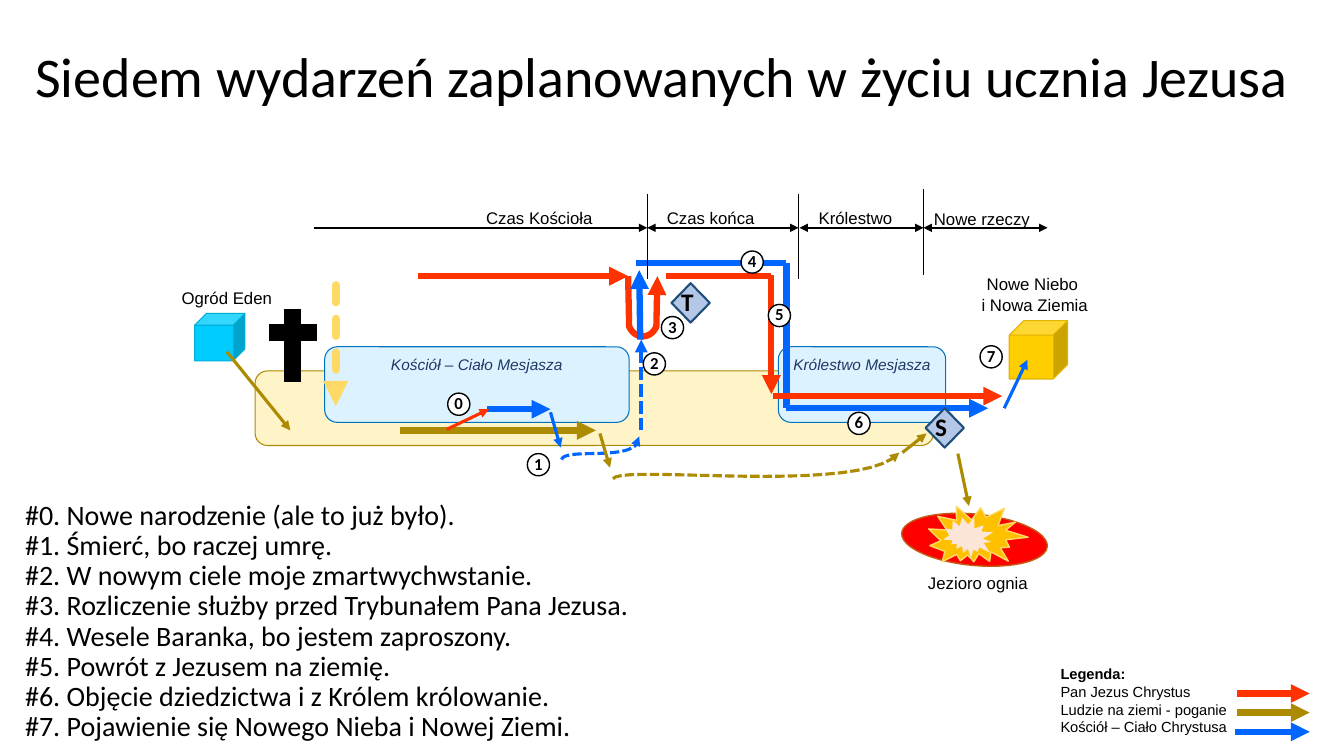
import pptx
import pptx.dml.color
import pptx.enum.dml
import pptx.enum.shapes
import pptx.enum.text
import pptx.oxml
import pptx.oxml.ns
import pptx.util

tint = pptx.dml.color.RGBColor.from_string
BLACK, WHITE = tint("000000"), tint("FFFFFF")
RED, BLUE, GOLD = tint("FF3300"), tint("0066FF"), tint("AD8B00")
CREAM, PALE, EDGE, NAVY = tint("FFF4C7"), tint("DDF2FF"), tint("0070C0"), tint("203864")
STEEL, DEEP = tint("B4C7E7"), tint("1F4E79")
FIRE, RUST, AMBER, SUN, PEACH = map(tint, ("FF0000", "C55A11", "FFC000", "FFD966", "FBE5D6"))
YOLK, HONEY, AQUA, TEAL = map(tint, ("FFCE00", "E0B400", "00CCFF", "00AED8"))

KIND = pptx.enum.shapes.MSO_SHAPE
LEFT, MID = pptx.enum.text.PP_ALIGN.LEFT, pptx.enum.text.PP_ALIGN.CENTER
TOP, HALF = pptx.enum.text.MSO_ANCHOR.TOP, pptx.enum.text.MSO_ANCHOR.MIDDLE
PX = 9144


class Board:
    face = "Arial"
    serif = "Calibri"

    def __init__(self, deck):
        self.slide = deck.slides.add_slide(deck.slide_layouts[5])
        self.shapes = self.slide.shapes

    def px(self, *nums):
        return [pptx.util.Emu(round(n * PX)) for n in nums]

    def put(self, shape, rows, font, ink=BLACK, para=None, frame=None):
        body = shape.text_frame
        for key, val in {"word_wrap": True, "vertical_anchor": TOP, **(frame or {})}.items():
            setattr(body, key, val)
        for i, row in enumerate(rows):
            line = body.paragraphs[0] if i == 0 else body.add_paragraph()
            line.text = row
            for key, val in {"alignment": LEFT, **(para or {})}.items():
                setattr(line, key, val)
            for run in line.runs:
                for key, val in font.items():
                    setattr(run.font, key, val)
                run.font.color.rgb = ink

    def pads(self, wide, high):
        wide, high = self.px(wide, high)
        return {"margin_left": wide, "margin_right": wide,
                "margin_top": high, "margin_bottom": high}

    def font(self, size, name=None, **more):
        return {"name": name or self.face, "size": pptx.util.Pt(size), **more}

    def title(self, text, box):
        shape = self.shapes.title
        for key, val in zip(("left", "top", "width", "height"), self.px(*box)):
            setattr(shape, key, val)
        self.put(shape, [text], self.font(40, self.serif), para={"line_spacing": 0.9},
                 frame={"vertical_anchor": HALF,
                        "auto_size": pptx.enum.text.MSO_AUTO_SIZE.NONE})

    def text(self, rows, box, font, **more):
        shape = self.shapes.add_textbox(*self.px(*box))
        self.put(shape, rows, font, **more)
        return shape

    def label(self, text, box):
        self.text([text], box, self.font(12), para={"alignment": MID},
                  frame={"vertical_anchor": HALF, **self.pads(3, 3)})

    def form(self, kind, box, fill, edge=None, width=0.75, turn=0):
        shape = self.shapes.add_shape(kind, *self.px(*box))
        shape.shadow.inherit = False
        shape.rotation = turn
        shape.fill.solid()
        shape.fill.fore_color.rgb = fill
        if edge is None:
            shape.line.fill.background()
        else:
            shape.line.color.rgb = edge
            shape.line.width = pptx.util.Pt(width)
        return shape

    def realm(self, text, box):
        shape = self.form(KIND.ROUNDED_RECTANGLE, box, PALE, EDGE)
        self.put(shape, [text], self.font(11, italic=True), NAVY,
                 {"alignment": MID}, {"word_wrap": False})

    def gem(self, mark, x, y):
        shape = self.form(KIND.DIAMOND, (x, y, 38, 39), STEEL, DEEP, 1.5)
        self.put(shape, [mark], self.font(18, self.serif, bold=True),
                 para={"line_spacing": 0.9},
                 frame={"vertical_anchor": HALF, **self.pads(0, 4)})

    def disc(self, mark, x, y):
        shape = self.form(KIND.OVAL, (x, y, 22, 22), WHITE, BLACK, 1)
        self.put(shape, [mark], self.font(12, self.serif, bold=True),
                 para={"alignment": MID, "line_spacing": 0.9},
                 frame={"vertical_anchor": HALF, "word_wrap": False})

    def stroke(self, shape, ink, width, ends, dash, cap=None):
        shape.line.color.rgb = ink
        shape.line.width = pptx.util.Pt(width)
        if dash:
            shape.line.dash_style = pptx.enum.dml.MSO_LINE.SQUARE_DOT
        edge = shape.element.spPr.find(pptx.oxml.ns.qn("a:ln"))
        if cap:
            edge.set("cap", cap)
        for end in ends:
            tag = f'<a:{end}End {pptx.oxml.ns.nsdecls("a")} type="triangle"/>'
            edge.append(pptx.oxml.parse_xml(tag))

    def line(self, ends, ink, width, tips=("tail",), dash=False, cap=None):
        straight = pptx.enum.shapes.MSO_CONNECTOR.STRAIGHT
        shape = self.shapes.add_connector(straight, *self.px(*ends))
        none = f'<a:effectLst {pptx.oxml.ns.nsdecls("a")}/>'
        self.stroke(shape, ink, width, tips, dash, cap)
        shape.element.spPr.append(pptx.oxml.parse_xml(none))

    def curve(self, knots, ink, width, dash=False, start=(), stop=()):
        a, b, c, d = knots
        steps = 20
        dots = list(start)
        for i in range(steps + 1):
            t = i / steps
            s = 1 - t
            dots.append([s**3 * p + 3 * s * s * t * q + 3 * s * t * t * r + t**3 * u
                         for p, q, r, u in zip(a, b, c, d)])
        dots = [self.px(*dot) for dot in [*dots, *stop]]
        pen = self.shapes.build_freeform(*dots[0], scale=1.0)
        pen.add_line_segments(dots[1:], close=False)
        shape = pen.convert_to_shape()
        shape.shadow.inherit = False
        shape.fill.background()
        self.stroke(shape, ink, width, ("tail",), dash)


def main():
    deck = pptx.Presentation()
    deck.slide_width, deck.slide_height = 1333 * PX, 750 * PX
    board = Board(deck)
    board.title("Siedem wydarzeń zaplanowanych w życiu ucznia Jezusa", (25, 40, 1270, 78))

    board.form(KIND.ROUNDED_RECTANGLE, (253, 368, 673, 74), CREAM, GOLD)
    board.realm("Królestwo Mesjasza", (772, 344, 166, 75))
    board.realm("Kościół – Ciało Mesjasza", (322, 344, 302, 75))

    board.line((397, 427, 591, 427), GOLD, 4.5)
    board.line((415, 274, 623, 274), RED, 4.5)
    board.line((483, 406, 546, 406), BLUE, 4.5)
    board.line((631, 261, 780, 261), BLUE, 4.5, ())
    board.curve(((624, 324), (630, 337), (645, 337), (651, 324)), RED, 4.5,
                start=[(623, 274)], stop=[(652, 274)])
    board.line((765, 273, 765, 391), RED, 4.5)
    board.line((661, 274, 765, 274), RED, 4.5, ())
    board.line((780, 261, 780, 405), BLUE, 4.5, ())
    board.line((767, 393, 994, 393), RED, 4.5)
    board.line((780, 405, 980, 405), BLUE, 4.5)
    board.curve(((557, 456), (560, 443), (635, 460), (634, 433)), BLUE, 2.25, True)
    board.line((635, 337, 634, 268), BLUE, 4.5)
    board.line((636, 427, 636, 337), BLUE, 3, dash=True)

    board.line((311, 226, 642, 226), BLACK, 1.5)
    for left, right in ((642, 792), (793, 916), (916, 1039)):
        board.line((left, 226, right, 226), BLACK, 1.5, ("head", "tail"))
    for x, y in ((642, 192), (792, 192), (916, 188)):
        board.line((x, y, x, y + 85), BLACK, 0.5, ())
    for text, x, y, wide in (("Czas Kościoła", 463, 203, 144), ("Czas końca", 648, 203, 114),
                             ("Królestwo", 802, 203, 93), ("Nowe rzeczy", 916, 204, 116),
                             ("Jezioro ognia", 898, 565, 144), ("Ogród Eden", 153, 282, 144)):
        board.label(text, (x, y, wide, 26))
    board.label("Nowe Niebo\n i Nowa Ziemia", (952, 269, 144, 46))

    board.curve(((608, 475), (615, 460), (857, 492), (892, 449)), GOLD, 2.25, True)
    board.gem("T", 666, 281)
    board.gem("S", 918, 405)

    board.form(KIND.FLOWCHART_CONNECTOR, (894, 510, 145, 51), FIRE, RUST, 1, 5.4)
    board.form(KIND.EXPLOSION2, (921, 498, 97, 68), AMBER, SUN, 1, 16.2)
    board.form(KIND.EXPLOSION2, (938, 511, 47, 45), PEACH, turn=56.2)
    board.form(KIND.CUBE, (1001, 318, 58, 58), YOLK, HONEY)
    board.form(KIND.CUBE, (193, 311, 50, 47), AQUA, TEAL)

    for ends, ink in (((895, 449, 919, 430), GOLD), ((595, 430, 605, 464), GOLD),
                      ((546, 409, 556, 444), BLUE), ((950, 450, 961, 502), GOLD),
                      ((996, 405, 1019, 357), BLUE), ((443, 426, 485, 406), RED),
                      ((225, 349, 288, 427), GOLD)):
        board.line(ends, ink, 2.25)

    spots = ((444, 390), (523, 450), (638, 350), (656, 314),
             (735, 249), (762, 302), (841, 409), (972, 343))
    for i, (x, y) in enumerate(spots):
        board.disc(str(i), x, y)

    events = ("Nowe narodzenie (ale to już było).", "Śmierć, bo raczej umrę.",
              "W nowym ciele moje zmartwychwstanie.",
              "Rozliczenie służby przed Trybunałem Pana Jezusa.",
              "Wesele Baranka, bo jestem zaproszony.", "Powrót z Jezusem na ziemię.",
              "Objęcie dziedzictwa i z Królem królowanie.",
              "Pojawienie się Nowego Nieba i Nowej Ziemi.")
    board.text(["\n".join(f"#{i}. {text}" for i, text in enumerate(events))],
               (15, 492, 862, 248), board.font(20, board.serif), para={"line_spacing": 0.9})

    for x, y, ink in ((1225, 726, BLUE), (1227, 707, GOLD), (1227, 688, RED)):
        board.line((x, y, 1299, y), ink, 4.5)
    legend = board.text(["Legenda:", "Pan Jezus Chrystus", "Ludzie na ziemi - poganie",
                         "Kościół – Ciało Chrystusa"], (1042, 655, 199, 81), board.font(10.5))
    legend.text_frame.paragraphs[0].runs[0].font.bold = True

    board.line((333, 283, 333, 403), SUN, 6, dash=True, cap="rnd")
    board.line((267, 330, 314, 330), BLACK, 12, ())
    board.line((290, 379, 290, 307), BLACK, 12, ())
    deck.save("out.pptx")


if __name__ == "__main__":
    main()
